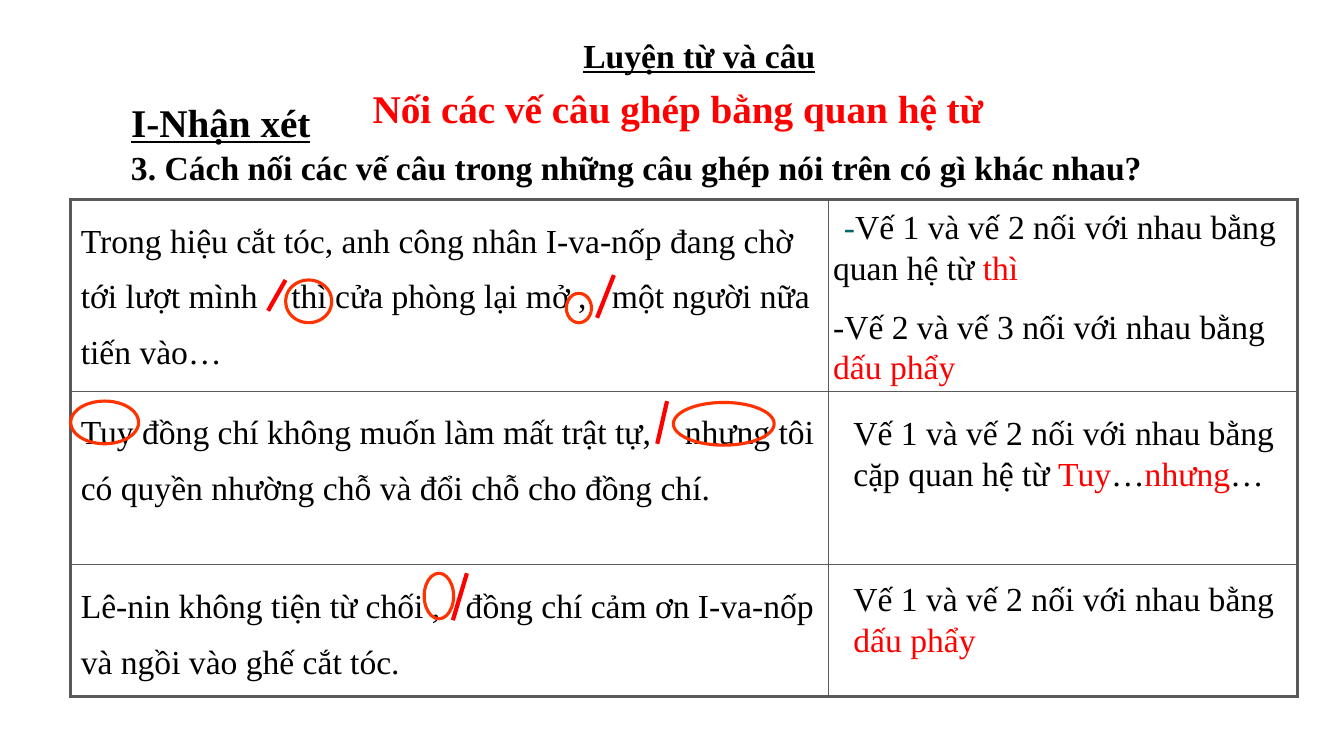
from lxml import etree
from pptx import Presentation
from pptx.dml.color import RGBColor
from pptx.enum.shapes import MSO_CONNECTOR, MSO_SHAPE
from pptx.enum.text import PP_ALIGN
from pptx.oxml.ns import qn
from pptx.util import Pt

CENTER, LEFT = PP_ALIGN.CENTER, PP_ALIGN.LEFT
OVAL, STRAIGHT = MSO_SHAPE.OVAL, MSO_CONNECTOR.STRAIGHT
COLORS = {"black": "000000", "red": "FF0000", "teal": "006666",
          "ring": "FF3300", "border": "595959"}
SERIF, SANS = "Times New Roman", "Arial"

# Content: a run is text plus the format that differs from the default
RED = {"color": "red"}
HEADINGS = [  # box (left, top, width, height), text, format
    ((283, 21.5, 433, 36), "Luyện từ và câu",
     dict(bold=True, underline=True, align=CENTER)),
    ((259, 57, 480, 41), "Nối các vế câu ghép bằng quan hệ từ",
     dict(bold=True, size=28, color="red")),
    ((86.5, 66.5, 146, 41), "I-Nhận xét",
     dict(bold=True, underline=True, size=28)),
    ((86.5, 107, 798, 30),
     "3. Cách nối các vế câu trong những câu ghép nói trên có gì khác nhau?",
     dict(bold=True, spacing=0.8)),
]
WIDE, NARROW = {"gap": 18}, {"gap": 12}  # room kept for the slash marks
SENTENCES = [
    [("Trong hiệu cắt tóc, anh công nhân I-va-nốp đang chờ tới lượt mình", {}),
     (" ", WIDE), ("thì cửa phòng lại mở ,", {}), (" ", NARROW),
     ("một người nữa tiến vào…", {})],
    [("Tuy đồng chí không muốn làm mất trật tự,", {}), (" ", WIDE),
     ("nhưng tôi có quyền nhường chỗ và đổi chỗ cho đồng chí.", {})],
    [("Lê-nin không tiện từ chối ,", {}), (" ", NARROW),
     ("đồng chí cảm ơn I-va-nốp và ngồi vào ghế cắt tóc.", {})],
]
ANSWERS = [  # box, paragraphs
    ((588, 139.5, 339, 143),
     [[(" ", {"font": SANS, "size": 28}), ("-", {"color": "teal"}),
       ("Vế 1 và vế 2 nối với nhau bằng quan hệ từ ", {}), ("thì", RED)],
      [("-Vế 2 và vế 3 nối với nhau bằng ", {}), ("dấu phẩy", RED)]]),
    ((602.5, 291, 324, 65.5),
     [[("Vế 1 và vế 2 nối với nhau bằng cặp quan hệ từ ", {}), ("Tuy", RED),
       ("…", {}), ("nhưng", RED), ("…", {})]]),
    ((602.5, 409.5, 318, 65.5),
     [[("Vế 1 và vế 2 nối với nhau bằng ", {}), ("dấu phẩy", RED)]]),
]
TABLE_AT = (50.5, 142.5)
COLS, ROWS = (541.5, 335), (137, 124, 94)
SLASHES = [  # x1, y1, x2, y2
    (204, 200, 191.5, 222), (333.5, 409.5, 323.5, 443),
    (438.5, 196.5, 426.5, 227), (476.5, 286.5, 469.5, 317),
]
RINGS = [  # left, top, width, height
    (204, 200, 33, 30.5), (404.5, 209.5, 18, 21), (50.5, 286.5, 48.5, 30.5),
    (303, 409.5, 21, 32.5), (481, 287.5, 72, 30.5),
]


def rgb(name):
    return RGBColor.from_string(COLORS[name])


def pts(values):
    return [Pt(v) for v in values]


def add_run(p, text, font=SERIF, size=24, color="black", bold=False,
            underline=False, gap=0):
    r = p.add_run()
    r.text = text
    f = r.font
    f.name, f.size, f.bold, f.underline = font, Pt(size), bold, underline
    f.color.rgb = rgb(color)
    if gap:
        r._r.get_or_add_rPr().set("spc", str(gap * 100))


def write(tf, paragraphs, align=LEFT, spacing=1.0, before=13):
    tf.word_wrap = True
    for i, runs in enumerate(paragraphs):
        p = tf.add_paragraph() if i else tf.paragraphs[0]
        p.alignment, p.line_spacing = align, spacing
        p.space_before = Pt(before if i else 0)
        for text, style in runs:
            add_run(p, text, **style)


def add_text(box, paragraphs, **layout):
    write(s.shapes.add_textbox(*pts(box)).text_frame, paragraphs, **layout)


def set_borders(cell, widths):
    tcPr = cell._tc.get_or_add_tcPr()
    for side, width in zip("LRTB", widths):
        ln = etree.SubElement(tcPr, qn(f"a:ln{side}"), w=str(Pt(width)))
        fill = etree.SubElement(ln, qn("a:solidFill"))
        etree.SubElement(fill, qn("a:srgbClr"), val=COLORS["border"])


prs = Presentation()
prs.slide_width, prs.slide_height = Pt(960), Pt(540)
s = prs.slides.add_slide(prs.slide_layouts[6])

# Headings
for box, text, style in HEADINGS:
    layout = {k: v for k, v in style.items() if k in ("align", "spacing")}
    look = {k: v for k, v in style.items() if k not in layout}
    add_text(box, [[(text, look)]], **layout)

# Table: thick outer frame, thin inner lines
table = s.shapes.add_table(len(ROWS), len(COLS), *pts(TABLE_AT),
                           Pt(sum(COLS)), Pt(sum(ROWS))).table
table.first_row = table.horz_banding = False
for column, width in zip(table.columns, COLS):
    column.width = Pt(width)
for i, height in enumerate(ROWS):
    table.rows[i].height = Pt(height)
    for j in range(len(COLS)):
        cell = table.cell(i, j)
        outer = (j == 0, j == len(COLS) - 1, i == 0, i == len(ROWS) - 1)
        set_borders(cell, [2.25 if edge else 1 for edge in outer])
        cell.fill.background()
    write(table.cell(i, 0).text_frame, [SENTENCES[i]], spacing=1.5)

# Answers over the right column
for box, paragraphs in ANSWERS:
    add_text(box, paragraphs)

# Slashes between clauses
for ends in SLASHES:
    slash = s.shapes.add_connector(STRAIGHT, *pts(ends))
    slash.line.color.rgb, slash.line.width = rgb("red"), Pt(3)
    etree.SubElement(slash._element.spPr, qn("a:effectLst"))

# Rings around connecting words and commas
for box in RINGS:
    ring = s.shapes.add_shape(OVAL, *pts(box))
    ring.shadow.inherit = False
    ring.fill.background()
    ring.line.color.rgb, ring.line.width = rgb("ring"), Pt(2.25)

prs.save("out.pptx")
